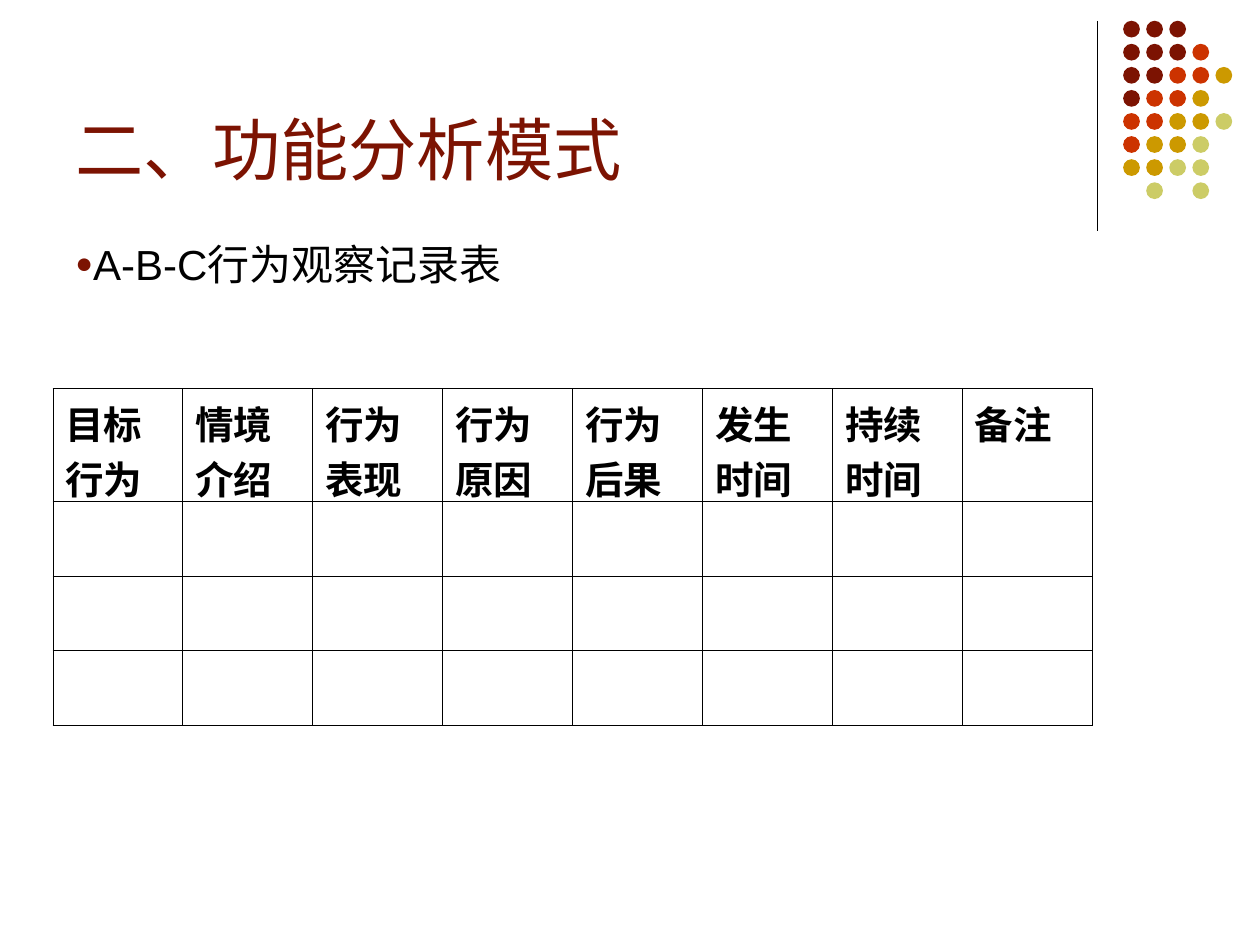
from lxml.etree import SubElement
from pptx import Presentation
from pptx.dml.color import RGBColor
from pptx.enum.shapes import MSO_CONNECTOR, MSO_SHAPE
from pptx.enum.text import MSO_ANCHOR, PP_ALIGN
from pptx.oxml.ns import qn
from pptx.util import Inches, Pt

WIDTH, HEIGHT = 10, 7.5
MAROON, BLACK = "7C1302", "000000"
DOT_COLORS = {"m": MAROON, "r": "CC3300", "g": "CC9900", "y": "CCCC66"}
DOT_ROWS = ["mmm", "mmmr", "mmrrg", "mrrg", "rrggy", "rggy", "ggyy", " y y"]
HEADINGS = ["目标行为", "情境介绍", "行为表现", "行为原因",
            "行为后果", "发生时间", "持续时间", "备注"]


def color(value):
    return RGBColor.from_string(value)


def write(frame, text, size, font="Arial", fill=BLACK, bold=False,
          anchor=MSO_ANCHOR.TOP, line_spacing=1.0, space_before=0):
    frame.word_wrap = True
    frame.vertical_anchor = anchor
    paragraph = frame.paragraphs[0]
    paragraph.alignment = PP_ALIGN.LEFT
    paragraph.line_spacing = line_spacing
    paragraph.space_before = Pt(space_before)
    run = paragraph.add_run()
    run.text = text
    run.font.name = font
    run.font.size = Pt(size)
    run.font.bold = bold
    run.font.color.rgb = color(fill)
    east_asian = SubElement(run.font._element, qn("a:ea"))
    east_asian.set("typeface", "Noto Sans CJK SC")
    return paragraph


def add_bullet(paragraph, char, fill, percent):
    properties = paragraph._p.get_or_add_pPr()
    bullet_color = SubElement(properties, qn("a:buClr"))
    SubElement(bullet_color, qn("a:srgbClr")).set("val", fill)
    SubElement(properties, qn("a:buSzPct")).set("val", str(percent * 1000))
    SubElement(properties, qn("a:buFont")).set("typeface", "Arial")
    SubElement(properties, qn("a:buChar")).set("char", char)


def add_borders(cell, fill, width):
    properties = cell._tc.get_or_add_tcPr()
    for position, side in enumerate(("a:lnL", "a:lnR", "a:lnT", "a:lnB")):
        border = properties.makeelement(qn(side), {"w": str(Pt(width))})
        properties.insert(position, border)
        solid = SubElement(border, qn("a:solidFill"))
        SubElement(solid, qn("a:srgbClr")).set("val", fill)


def add_ornament(slide, left, top, width, height):
    rule = slide.shapes.add_connector(
        MSO_CONNECTOR.STRAIGHT, Inches(left), Inches(top),
        Inches(left), Inches(top + height))
    rule.line.color.rgb = color(BLACK)
    rule.line.width = Pt(0.75)
    SubElement(rule._element.spPr, qn("a:effectLst"))
    pitch = height * 0.11
    diameter = height * 0.08
    first = left + width - 4 * pitch - diameter
    dots = slide.shapes.add_group_shape()
    for row, codes in enumerate(DOT_ROWS):
        for column, code in enumerate(codes):
            if code == " ":
                continue
            dot = dots.shapes.add_shape(
                MSO_SHAPE.OVAL, Inches(first + column * pitch),
                Inches(top + row * pitch), Inches(diameter), Inches(diameter))
            dot.shadow.inherit = False
            dot.fill.solid()
            dot.fill.fore_color.rgb = color(DOT_COLORS[code])
            dot.line.fill.background()


def add_heading(slide, left, top, width, height):
    title = slide.shapes.title
    title.left, title.top = Inches(left), Inches(top)
    title.width, title.height = Inches(width), Inches(height)
    write(title.text_frame, "二、功能分析模式", 39, fill=MAROON,
          anchor=MSO_ANCHOR.BOTTOM)


def add_caption(slide, left, top, width, height):
    caption = slide.shapes.add_textbox(
        Inches(left), Inches(top), Inches(width), Inches(height))
    paragraph = write(caption.text_frame, "A-B-C行为观察记录表", 24,
                      line_spacing=0.8, space_before=4.8)
    add_bullet(paragraph, "●", MAROON, 70)


def add_record_table(slide, left, top, width, height):
    records = slide.shapes.add_table(
        4, len(HEADINGS), Inches(left), Inches(top),
        Inches(width), Inches(height)).table
    for row, share in zip(records.rows, (0.336, 0.221, 0.221, 0.222)):
        row.height = Inches(height * share)
    for column in records.columns:
        column.width = Inches(width / len(HEADINGS))
    for cell in records.iter_cells():
        cell.margin_bottom = 0
        cell.fill.background()
        add_borders(cell, BLACK, 0.5)
    for cell, heading in zip(records.rows[0].cells, HEADINGS):
        write(cell.text_frame, heading, 22, font="Noto Sans CJK SC",
              bold=True, space_before=4.4)


def main():
    deck = Presentation()
    deck.slide_width, deck.slide_height = Inches(WIDTH), Inches(HEIGHT)
    slide = deck.slides.add_slide(deck.slide_layouts[5])
    add_ornament(slide, WIDTH * 0.871, HEIGHT * 0.022,
                 WIDTH * 0.107, HEIGHT * 0.222)
    add_heading(slide, WIDTH * 0.05, HEIGHT * 0.017,
                WIDTH * 0.825, HEIGHT * 0.19)
    add_caption(slide, WIDTH * 0.05, HEIGHT * 0.256,
                WIDTH * 0.556, HEIGHT * 0.056)
    add_record_table(slide, WIDTH * 0.042, HEIGHT * 0.411,
                     WIDTH * 0.825, HEIGHT * 0.357)
    deck.save("out.pptx")


if __name__ == "__main__":
    main()
